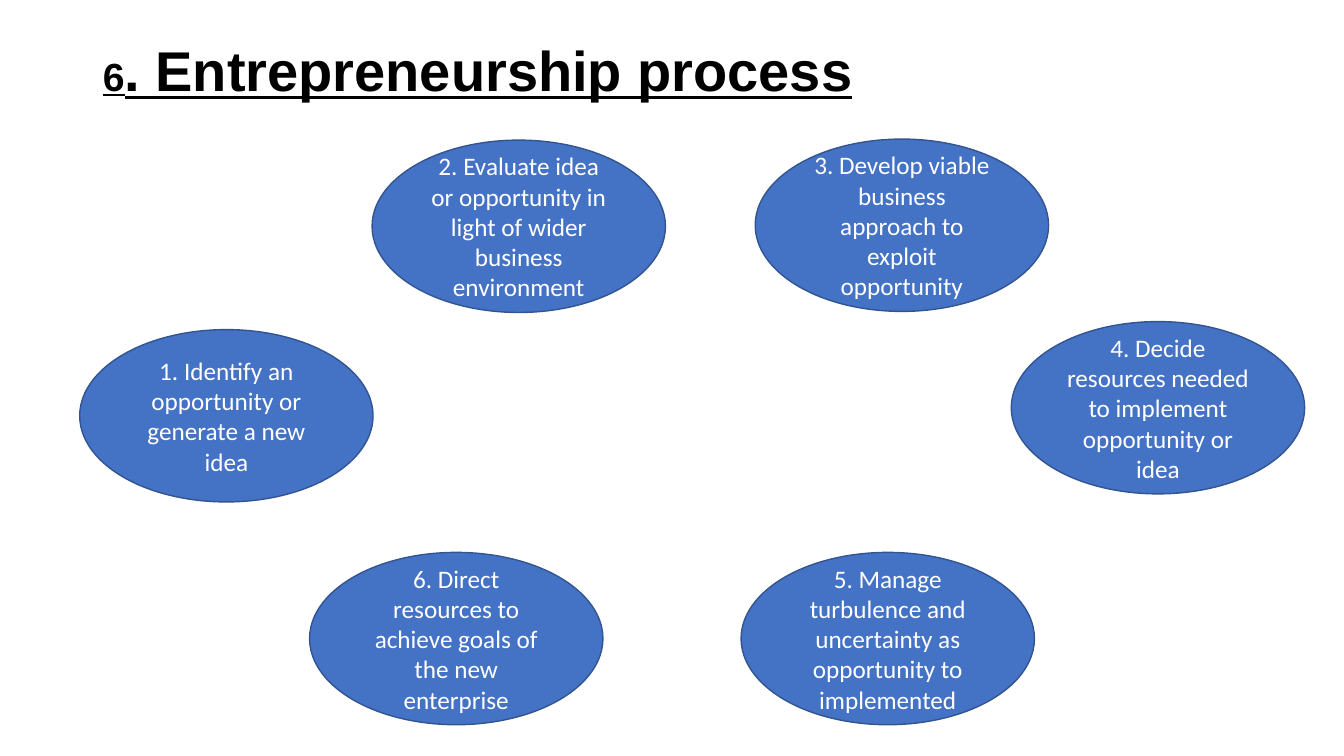
from typing import NamedTuple

from pptx import Presentation
from pptx.dml.color import RGBColor
from pptx.enum.shapes import MSO_SHAPE
from pptx.enum.text import MSO_ANCHOR, MSO_AUTO_SIZE, PP_ALIGN
from pptx.slide import Slide
from pptx.util import Inches, Pt

OVAL = MSO_SHAPE.OVAL
MIDDLE = MSO_ANCHOR.MIDDLE
NO_AUTOFIT = MSO_AUTO_SIZE.NONE
LEFT, CENTER = PP_ALIGN.LEFT, PP_ALIGN.CENTER

BLACK = RGBColor(0x00, 0x00, 0x00)
WHITE = RGBColor(0xFF, 0xFF, 0xFF)
BLUE = RGBColor(0x44, 0x72, 0xC4)
DARK_BLUE = RGBColor(0x32, 0x54, 0x91)

TITLE_ONLY = 5
STEP_WIDTH, STEP_HEIGHT = 2.91, 1.71


class Step(NamedTuple):
    left: float
    top: float
    text: str


class TitleRun(NamedTuple):
    text: str
    size: int


TITLE_RUNS = [TitleRun("6", 28), TitleRun(". Entrepreneurship process", 40)]

STEPS = [
    Step(0.79, 3.27, "1. Identify an opportunity or generate a new idea"),
    Step(3.69, 1.39, "2. Evaluate idea or opportunity in light of wider business environment"),
    Step(7.49, 1.38, "3. Develop viable business approach to exploit opportunity"),
    Step(10.03, 3.19, "4. Decide resources needed to implement opportunity or idea"),
    Step(7.35, 5.48, "5. Manage turbulence and uncertainty as opportunity to implemented"),
    Step(3.07, 5.48, "6. Direct resources to achieve goals of the new enterprise"),
]


def set_title(s: Slide, runs: list[TitleRun]) -> None:
    sp = s.shapes.title
    sp.left, sp.top = Inches(0.92), Inches(0.26)
    sp.width, sp.height = Inches(11.71), Inches(0.93)
    tf = sp.text_frame
    tf.auto_size = NO_AUTOFIT
    tf.word_wrap = True
    tf.vertical_anchor = MIDDLE
    p = tf.paragraphs[0]
    p.alignment = LEFT
    p.line_spacing = 0.9
    for run in runs:
        r = p.add_run()
        r.text = run.text
        r.font.name = "Arial"
        r.font.size = Pt(run.size)
        r.font.bold = True
        r.font.underline = True
        r.font.color.rgb = BLACK


def add_step(s: Slide, step: Step) -> None:
    sp = s.shapes.add_shape(OVAL, Inches(step.left), Inches(step.top),
                            Inches(STEP_WIDTH), Inches(STEP_HEIGHT))
    sp.shadow.inherit = False
    sp.fill.solid()
    sp.fill.fore_color.rgb = BLUE
    sp.line.color.rgb = DARK_BLUE
    sp.line.width = Pt(1)
    tf = sp.text_frame
    tf.word_wrap = True
    tf.vertical_anchor = MIDDLE
    p = tf.paragraphs[0]
    p.alignment = CENTER
    r = p.add_run()
    r.text = step.text
    r.font.name = "Calibri"
    r.font.size = Pt(18)
    r.font.color.rgb = WHITE


def main() -> None:
    prs = Presentation()
    prs.slide_width, prs.slide_height = Inches(13.33), Inches(7.5)
    s = prs.slides.add_slide(prs.slide_layouts[TITLE_ONLY])

    # Heading
    set_title(s, TITLE_RUNS)

    # Ring of process steps
    for step in STEPS:
        add_step(s, step)

    prs.save("out.pptx")


if __name__ == "__main__":
    main()
